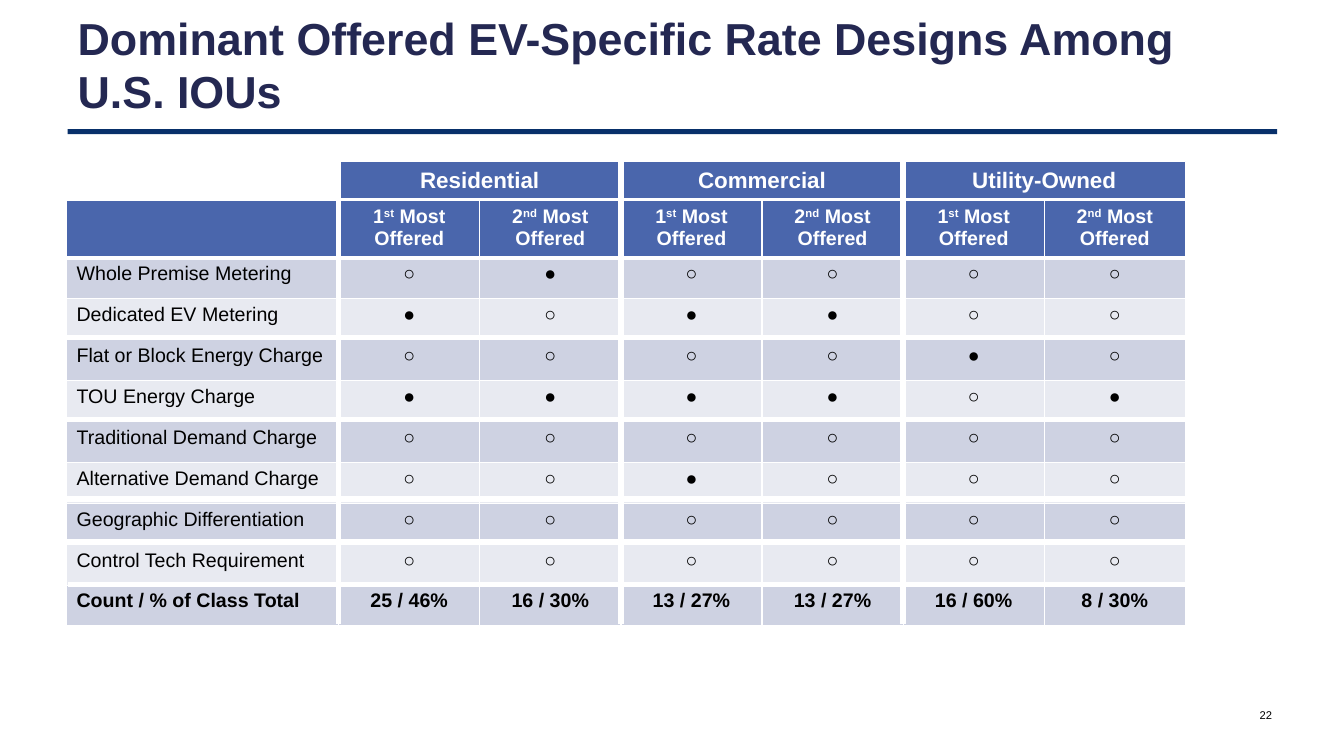
"""Build the slide on dominant EV-specific rate designs."""
from dataclasses import dataclass
from typing import Any

from lxml.etree import SubElement
from pptx import Presentation
from pptx.dml.color import RGBColor
from pptx.enum.shapes import MSO_CONNECTOR, MSO_SHAPE
from pptx.enum.text import MSO_ANCHOR, MSO_AUTO_SIZE, PP_ALIGN
from pptx.oxml.ns import qn
from pptx.util import Pt

COLORS = {
    "title": "242852", "rule": "08306A", "header": "4A66AC", "odd": "CED2E2",
    "even": "E8EAF1", "white": "FFFFFF", "black": "000000",
}
TABLE_LEFT, TABLE_TOP = 47.52, 143.28
LABEL_WIDTH, DATA_WIDTH = 194.4, 100.8
HEADER_HEIGHT, ROW_HEIGHT = 39.4, 29.25
GROUP_TOP, GROUP_HEIGHT = 115.2, 26.64
GROUP_LEFT, GROUP_WIDTH = TABLE_LEFT + LABEL_WIDTH, 2 * DATA_WIDTH
DIVIDER_BOTTOM = 446
GROUPS = ("Residential", "Commercial", "Utility-Owned")
RANKS = (("1", "st"), ("2", "nd"))


@dataclass(frozen=True)
class RateRow:
    """A table row with its label and six values."""
    label: str
    values: tuple[str, ...]
    bold: bool = False


@dataclass(frozen=True)
class Divider:
    """A straight white line across the table."""
    left: float
    top: float
    right: float
    bottom: float


ROWS = (
    RateRow("Whole Premise Metering", tuple("○●○○○○")),
    RateRow("Dedicated EV Metering", tuple("●○●●○○")),
    RateRow("Flat or Block Energy Charge", tuple("○○○○●○")),
    RateRow("TOU Energy Charge", tuple("●●●●○●")),
    RateRow("Traditional Demand Charge", tuple("○○○○○○")),
    RateRow("Alternative Demand Charge", tuple("○○●○○○")),
    RateRow("Geographic Differentiation", tuple("○○○○○○")),
    RateRow("Control Tech Requirement", tuple("○○○○○○")),
    RateRow("Count / % of Class Total",
            ("25 / 46%", "16 / 30%", "13 / 27%", "13 / 27%", "16 / 60%", "8 / 30%"), True),
)
DIVIDERS = tuple(
    Divider(GROUP_LEFT + index * GROUP_WIDTH, GROUP_TOP,
            GROUP_LEFT + index * GROUP_WIDTH, DIVIDER_BOTTOM)
    for index in range(len(GROUPS))
) + tuple(
    Divider(left, top, left + 806.4, top)
    for left, top in ((40.32, 241.2), (43.92, 299.52), (43.92, 356.4),
                      (43.92, 387.36), (48.24, 417.6))
)


def rgb(name: str) -> RGBColor:
    """Return the named colour."""
    return RGBColor.from_string(COLORS[name])


def apply_format(target: Any, values: dict[str, Any]) -> None:
    """Set each attribute given in the format values."""
    for name, value in values.items():
        setattr(target, name, value)


def add_run(paragraph: Any, text: str, size: float, color: str,
            bold: bool = False, superscript: bool = False) -> None:
    """Append a formatted run to the paragraph."""
    run = paragraph.add_run()
    run.text = text
    apply_format(run.font, {"name": "Arial", "size": Pt(size), "bold": bold})
    run.font.color.rgb = rgb(color)
    if superscript:
        run.font._element.set("baseline", "30000")


def paint(fill: Any, color: str) -> None:
    """Give the fill a solid colour."""
    fill.solid()
    fill.fore_color.rgb = rgb(color)


def set_borders(cell: Any, bottom: float) -> None:
    """Draw white borders with the given bottom width in points."""
    properties = cell._tc.get_or_add_tcPr()
    for index, (tag, width) in enumerate(
            (("a:lnL", 1), ("a:lnR", 1), ("a:lnT", 1), ("a:lnB", bottom))):
        line = SubElement(properties, qn(tag), w=str(Pt(width)))
        SubElement(SubElement(line, qn("a:solidFill")), qn("a:srgbClr"), val=COLORS["white"])
        properties.remove(line)
        properties.insert(index, line)


def add_title(slide: Any) -> None:
    """Place and format the slide title."""
    title = slide.shapes.title
    apply_format(title, {"left": Pt(48.24), "top": Pt(2.88),
                         "width": Pt(864), "height": Pt(84.96)})
    apply_format(title.text_frame, {"word_wrap": True, "vertical_anchor": MSO_ANCHOR.BOTTOM,
                                    "auto_size": MSO_AUTO_SIZE.NONE})
    paragraph = title.text_frame.paragraphs[0]
    paragraph.alignment = PP_ALIGN.LEFT
    add_run(paragraph, "Dominant Offered EV-Specific Rate Designs Among U.S. IOUs",
            32, "title", True)


def add_rectangle(slide: Any, left: float, top: float, width: float,
                  height: float, color: str) -> Any:
    """Add a filled rectangle without an outline or shadow."""
    shape = slide.shapes.add_shape(MSO_SHAPE.RECTANGLE, Pt(left), Pt(top), Pt(width), Pt(height))
    shape.shadow.inherit = False
    paint(shape.fill, color)
    shape.line.fill.background()
    return shape


def add_group_header(slide: Any, index: int, label: str) -> None:
    """Add the heading over one pair of columns."""
    shape = add_rectangle(slide, GROUP_LEFT + index * GROUP_WIDTH, GROUP_TOP,
                          GROUP_WIDTH, GROUP_HEIGHT, "header")
    shape.line.color.rgb = rgb("white")
    shape.line.width = Pt(0.75)
    apply_format(shape.text_frame, {"word_wrap": True, "vertical_anchor": MSO_ANCHOR.MIDDLE})
    paragraph = shape.text_frame.paragraphs[0]
    paragraph.alignment = PP_ALIGN.CENTER
    add_run(paragraph, label, 16, "white", True)


def add_rate_table(slide: Any) -> None:
    """Add the table of rate designs."""
    column_count = 1 + len(GROUPS) * len(RANKS)
    table = slide.shapes.add_table(
        len(ROWS) + 1, column_count, Pt(TABLE_LEFT), Pt(TABLE_TOP),
        Pt(LABEL_WIDTH + (column_count - 1) * DATA_WIDTH),
        Pt(HEADER_HEIGHT + len(ROWS) * ROW_HEIGHT)).table
    for index, column in enumerate(table.columns):
        column.width = Pt(DATA_WIDTH if index else LABEL_WIDTH)
    for index, row in enumerate(table.rows):
        row.height = Pt(ROW_HEIGHT if index else HEADER_HEIGHT)
        for column_index, cell in enumerate(row.cells):
            paint(cell.fill, ("odd" if index % 2 else "even") if index else "header")
            set_borders(cell, 1 if index else 3)
            paragraph = cell.text_frame.paragraphs[0]
            if column_index:
                paragraph.alignment = PP_ALIGN.CENTER
            if index:
                rate = ROWS[index - 1]
                text = (rate.label, *rate.values)[column_index]
                add_run(paragraph, text, 14, "black", rate.bold)
            elif column_index:
                number, suffix = RANKS[(column_index - 1) % len(RANKS)]
                add_run(paragraph, number, 14, "white", True)
                add_run(paragraph, suffix, 14, "white", True, True)
                add_run(paragraph, " Most Offered", 14, "white", True)


def add_divider(slide: Any, divider: Divider) -> None:
    """Add one white divider line."""
    connector = slide.shapes.add_connector(
        MSO_CONNECTOR.STRAIGHT, Pt(divider.left), Pt(divider.top),
        Pt(divider.right), Pt(divider.bottom))
    connector.line.color.rgb = rgb("white")
    connector.line.width = Pt(4)
    SubElement(connector._element.spPr, qn("a:effectLst"))


def add_page_number(slide: Any) -> None:
    """Add the page number in the lower right corner."""
    frame = slide.shapes.add_textbox(Pt(879.84), Pt(496.08), Pt(36), Pt(28.8)).text_frame
    apply_format(frame, {"word_wrap": True, "vertical_anchor": MSO_ANCHOR.MIDDLE})
    frame.paragraphs[0].alignment = PP_ALIGN.RIGHT
    add_run(frame.paragraphs[0], "22", 8, "black")


def main() -> None:
    """Build and save the presentation."""
    presentation = Presentation()
    apply_format(presentation, {"slide_width": Pt(960), "slide_height": Pt(540)})
    slide = presentation.slides.add_slide(presentation.slide_layouts.get_by_name("Title Only"))
    add_rectangle(slide, 48.24, 92.16, 864, 3.6, "rule")
    add_title(slide)
    add_page_number(slide)
    add_rate_table(slide)
    for index, label in enumerate(GROUPS):
        add_group_header(slide, index, label)
    for divider in DIVIDERS:
        add_divider(slide, divider)
    presentation.save("out.pptx")


if __name__ == "__main__":
    main()
